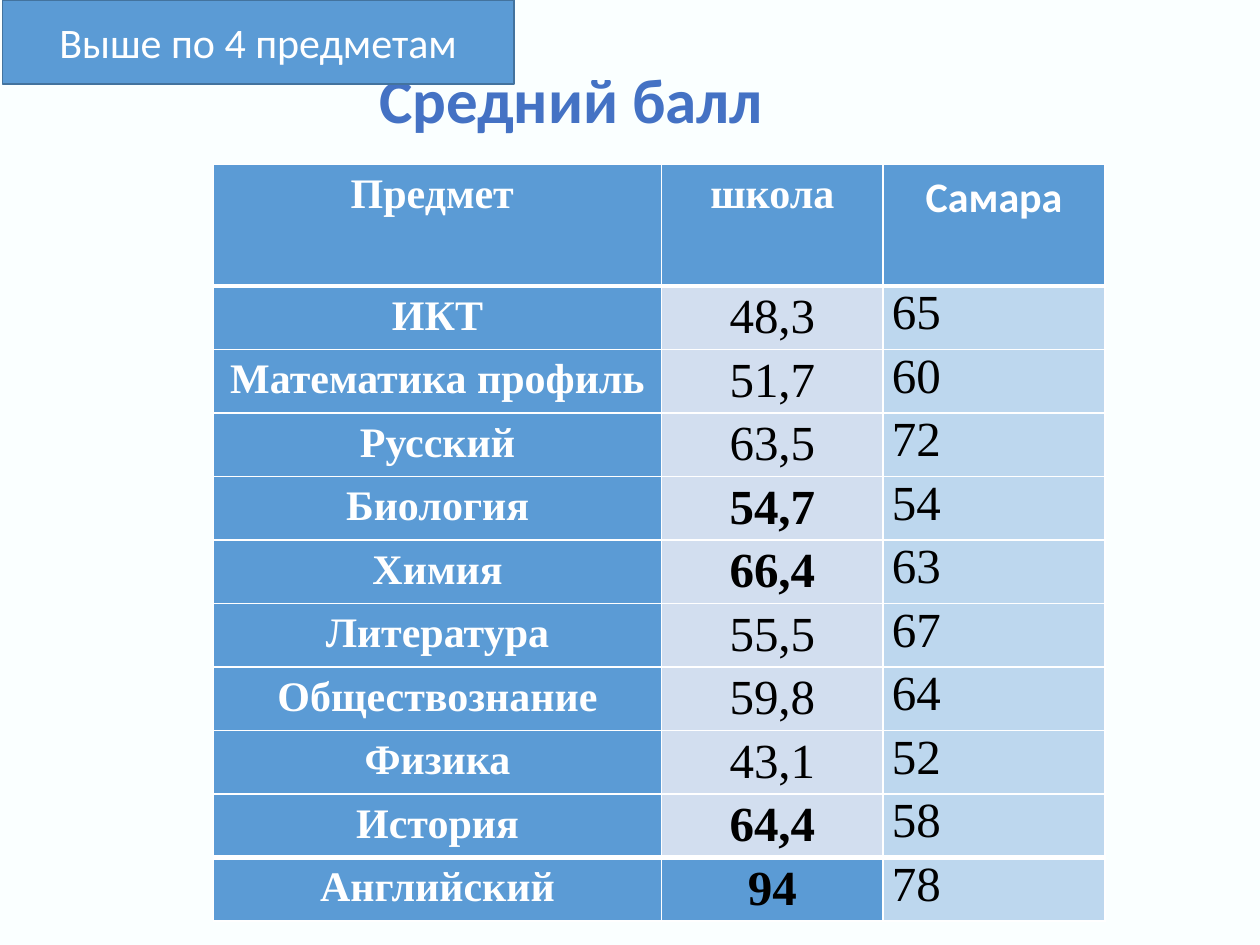
from dataclasses import dataclass

from lxml import etree
from pptx import Presentation
from pptx.dml.color import RGBColor
from pptx.enum import shapes, text
from pptx.oxml import ns
from pptx.util import Pt

WHITE = RGBColor(0xFF, 0xFF, 0xFF)
BLACK = RGBColor(0, 0, 0)
BACKGROUND = RGBColor(0xFA, 0xFF, 0xFF)
TITLE_BLUE = RGBColor(0x44, 0x72, 0xC4)
BLUE = RGBColor(0x5B, 0x9B, 0xD5)
DARK_BLUE = RGBColor(0x43, 0x73, 0x9E)
SCHOOL_FILL = RGBColor(0xD2, 0xDE, 0xEF)
CITY_FILL = RGBColor(0xBD, 0xD7, 0xEE)

SERIF, SANS = "Times New Roman", "Calibri"
CENTER, LEFT = text.PP_ALIGN.CENTER, text.PP_ALIGN.LEFT
COLUMN_WIDTHS = (256, 126.7, 126.7)
HEADER_HEIGHT, ROW_HEIGHT = 69.5, 36.3
SCHOOL_SPACING = 1.07  # keeps the 28 pt line within ROW_HEIGHT
THIN, THICK = 1, 3
CELL_MARGINS = {"margin_left": Pt(5), "margin_right": Pt(5),
                "margin_top": 0, "margin_bottom": 0}


@dataclass(frozen=True)
class Style:
    size: float
    color: RGBColor
    bold: bool = False
    font: str = SERIF
    align: text.PP_ALIGN = CENTER
    spacing: float = 1.15


@dataclass(frozen=True)
class Score:
    subject: str
    school: str
    city: str

    def school_is_higher(self) -> bool:
        return float(self.school.replace(",", ".")) > float(self.city)


SCORES = (
    Score("ИКТ", "48,3", "65"),
    Score("Математика профиль", "51,7", "60"),
    Score("Русский", "63,5", "72"),
    Score("Биология", "54,7", "54"),
    Score("Химия", "66,4", "63"),
    Score("Литература", "55,5", "67"),
    Score("Обществознание", "59,8", "64"),
    Score("Физика", "43,1", "52"),
    Score("История", "64,4", "58"),
    Score("Английский", "94", "78"),
)
LABEL = Style(24, WHITE, bold=True)
CITY_LABEL = Style(24, WHITE, bold=True, font=SANS)
CITY_VALUE = Style(28, BLACK, align=LEFT, spacing=1.0)


def set_attributes(target, values: dict) -> None:
    for name, value in values.items():
        setattr(target, name, value)


def write(frame, wording: str, style: Style) -> None:
    paragraph = frame.paragraphs[0]
    set_attributes(paragraph, {"alignment": style.align, "line_spacing": style.spacing})
    run = paragraph.add_run()
    run.text = wording
    set_attributes(run.font, {"size": Pt(style.size), "bold": style.bold, "name": style.font})
    run.font.color.rgb = style.color


def add_borders(cell, top: float, bottom: float) -> None:
    properties = cell._tc.get_or_add_tcPr()
    for side, width in {"L": THIN, "R": THIN, "T": top, "B": bottom}.items():
        line = etree.SubElement(properties, ns.qn(f"a:ln{side}"), w=str(Pt(width)))
        fill = etree.SubElement(line, ns.qn("a:solidFill"))
        etree.SubElement(fill, ns.qn("a:srgbClr"), val=str(WHITE))


def fill_row(row, wordings, styles, fills, top: float, bottom: float) -> None:
    for cell, wording, style, color in zip(row.cells, wordings, styles, fills):
        set_attributes(cell, CELL_MARGINS)
        add_borders(cell, top, bottom)
        cell.fill.solid()
        cell.fill.fore_color.rgb = color
        write(cell.text_frame, wording, style)


def add_score_table(slide) -> None:
    height = HEADER_HEIGHT + ROW_HEIGHT * len(SCORES)
    table = slide.shapes.add_table(len(SCORES) + 1, len(COLUMN_WIDTHS), Pt(122), Pt(94),
                                   Pt(sum(COLUMN_WIDTHS)), Pt(height)).table
    set_attributes(table, {"first_row": False, "horz_banding": False})
    for column, width in zip(table.columns, COLUMN_WIDTHS):
        column.width = Pt(width)
    header, *rows = table.rows
    header.height = Pt(HEADER_HEIGHT)
    fill_row(header, ("Предмет ", "школа", "Самара"), (LABEL, LABEL, CITY_LABEL),
             (BLUE, BLUE, BLUE), THIN, THICK)
    last = len(SCORES) - 1
    for index, (row, score) in enumerate(zip(rows, SCORES)):
        row.height = Pt(ROW_HEIGHT)
        school_value = Style(28, BLACK, bold=score.school_is_higher(), spacing=SCHOOL_SPACING)
        fill_row(row, (score.subject, score.school, score.city),
                 (LABEL, school_value, CITY_VALUE),
                 (BLUE, BLUE if index == last else SCHOOL_FILL, CITY_FILL),
                 THICK if index in (0, last) else THIN,
                 THICK if index == last - 1 else THIN)


def add_title(slide) -> None:
    title = slide.shapes.add_textbox(Pt(209.5), Pt(23.8), Pt(507.6), Pt(69.8))
    set_attributes(title.text_frame, {"word_wrap": True,
                                      "vertical_anchor": text.MSO_ANCHOR.MIDDLE})
    write(title.text_frame, "Средний балл",
          Style(36, TITLE_BLUE, bold=True, font=SANS, align=LEFT, spacing=0.9))


def add_summary(slide) -> None:
    summary = slide.shapes.add_shape(shapes.MSO_SHAPE.RECTANGLE,
                                     Pt(1.4), 0, Pt(292.3), Pt(48.2))
    summary.shadow.inherit = False
    summary.fill.solid()
    summary.fill.fore_color.rgb = BLUE
    summary.line.color.rgb = DARK_BLUE
    summary.line.width = Pt(1)
    summary.text_frame.vertical_anchor = text.MSO_ANCHOR.MIDDLE
    write(summary.text_frame, "Выше по 4 предметам",
          Style(24, WHITE, font=SANS, spacing=1.0))


def main() -> None:
    deck = Presentation()
    set_attributes(deck, {"slide_width": Pt(720), "slide_height": Pt(540)})
    slide = deck.slides.add_slide(deck.slide_layouts[6])
    slide.background.fill.solid()
    slide.background.fill.fore_color.rgb = BACKGROUND
    add_title(slide)
    add_score_table(slide)
    add_summary(slide)
    deck.save("out.pptx")


if __name__ == "__main__":
    main()
